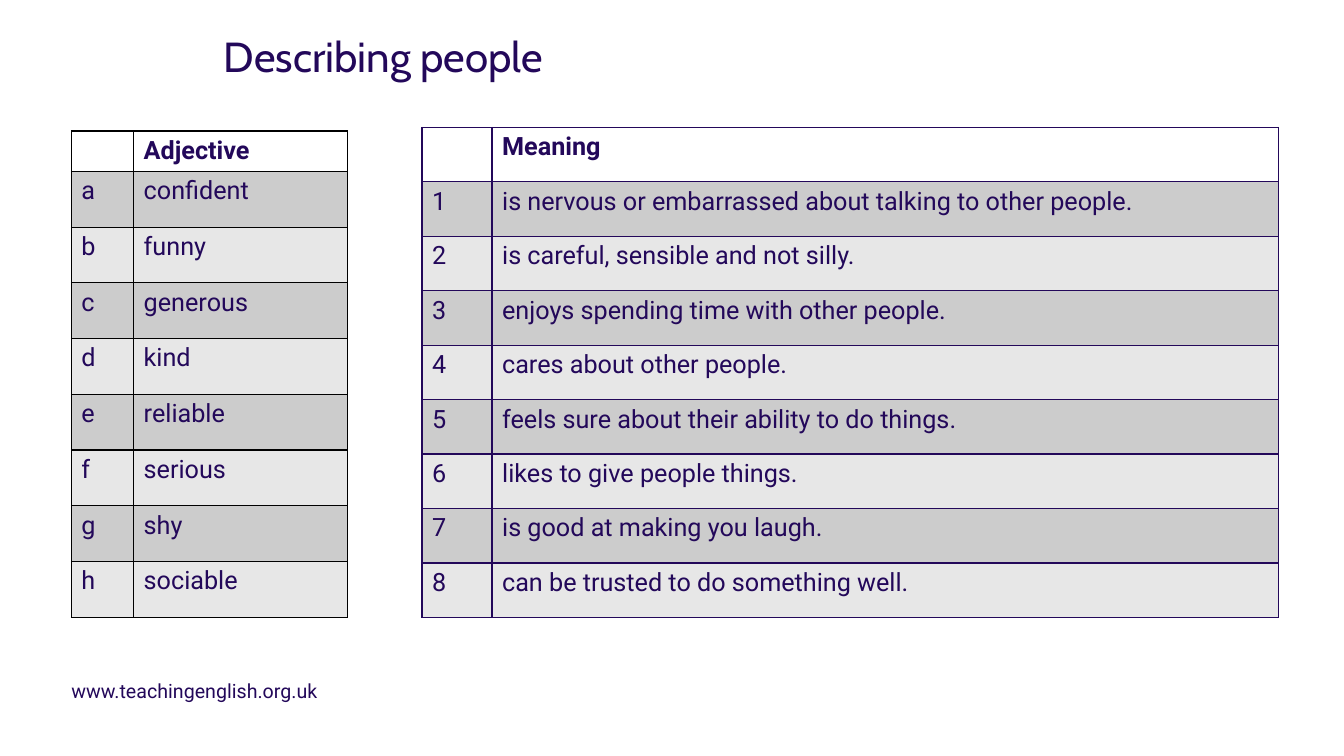
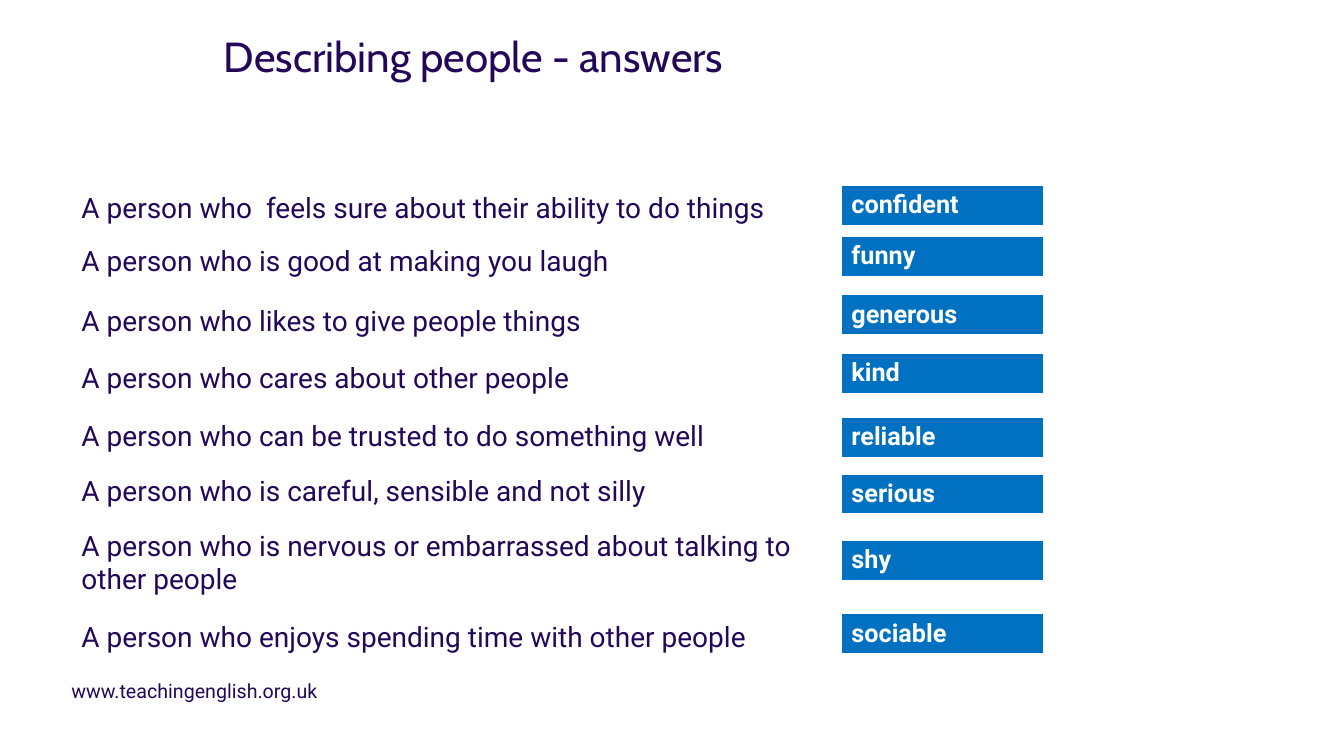
from dataclasses import dataclass

from lxml import etree
from pptx import Presentation
from pptx.dml.color import RGBColor
from pptx.enum.text import MSO_ANCHOR
from pptx.oxml.ns import qn
from pptx.util import Pt

TOP, BOTTOM = MSO_ANCHOR.TOP, MSO_ANCHOR.BOTTOM


@dataclass(frozen=True)
class Theme:
    ink: str = "23085A"
    black: str = "000000"
    white: str = "FFFFFF"
    blue: str = "0070C0"
    bands: tuple = ("CCCCCC", "E7E7E7")
    title_font: str = "Cabin"
    body_font: str = "Roboto"
    title_size: int = 30
    sentence_size: int = 20
    table_size: int = 18
    footer_size: int = 14


THEME = Theme()
MARGIN = 51
LABEL_LEFT = 601
THIN_EDGES = {"lnL": 1, "lnR": 1, "lnT": 1, "lnB": 1}
CARD_EDGES = {**THIN_EDGES, "lnB": 3}

TITLE = {"name": THEME.title_font, "size": Pt(THEME.title_size), "color": THEME.ink}
FOOTER = {"name": THEME.body_font, "size": Pt(THEME.footer_size), "color": THEME.ink}
BODY = {"name": THEME.body_font, "size": Pt(THEME.table_size), "color": THEME.ink, "bold": False}
HEADER = {**BODY, "bold": True}
SENTENCE = {**BODY, "size": Pt(THEME.sentence_size)}
LABEL = {**HEADER, "color": THEME.white}

MEANINGS = [
    "is nervous or embarrassed about talking to other people.",
    "is careful, sensible and not silly.",
    "enjoys spending time with other people.",
    "cares about other people.",
    "feels sure about their ability to do things.",
    "likes to give people things.",
    "is good at making you laugh.",
    "can be trusted to do something well.",
]

ANSWERS = [
    ("A person who  feels sure about their ability to do things", 134, "confident", 132.5),
    ("A person who is good at making you laugh", 172, "funny", 169),
    ("A person who likes to give people things", 214.5, "generous", 210.5),
    ("A person who cares about other people", 255.5, "kind", 252.5),
    ("A person who can be trusted to do something well", 296.5, "reliable", 298),
    ("A person who is careful, sensible and not silly", 336, "serious", 338.5),
    ("A person who is nervous or embarrassed about talking to other people", 375, "shy", 386),
    ("A person who enjoys spending time with other people", 440, "sociable", 438.5),
]


def write(p, text, style):
    r = p.add_run()
    r.text = text
    for name, value in style.items():
        if name == "color":
            r.font.color.rgb = RGBColor.from_string(value)
        else:
            setattr(r.font, name, value)


def add_text(s, box, text, style, anchor=TOP, line_spacing=None):
    tf = s.shapes.add_textbox(*map(Pt, box)).text_frame
    settings = {"word_wrap": True, "vertical_anchor": anchor, "margin_left": 0,
                "margin_right": 0, "margin_top": 0, "margin_bottom": 0}
    for name, value in settings.items():
        setattr(tf, name, value)
    p = tf.paragraphs[0]
    p.line_spacing = line_spacing
    write(p, text, style)


def set_borders(cell, color, edges):
    tc_pr = cell._tc.get_or_add_tcPr()
    for edge, width in edges.items():
        ln = etree.SubElement(tc_pr, qn(f"a:{edge}"), w=str(Pt(width)))
        fill = etree.SubElement(ln, qn("a:solidFill"))
        etree.SubElement(fill, qn("a:srgbClr"), val=color)


def fill_cell(cell, text, style, fill, border, edges):
    set_borders(cell, border, edges)
    if fill:
        cell.fill.solid()
        cell.fill.fore_color.rgb = RGBColor.from_string(fill)
    else:
        cell.fill.background()
    if text:
        write(cell.text_frame.paragraphs[0], text, style)


def add_grid(s, left, top, widths, heights):
    table = s.shapes.add_table(len(heights), len(widths), Pt(left), Pt(top),
                               Pt(sum(widths)), Pt(sum(heights))).table
    table.first_row = table.horz_banding = False
    for column, width in zip(table.columns, widths):
        column.width = Pt(width)
    for row, height in zip(table.rows, heights):
        row.height = Pt(height)
    return table


def add_word_table(s, left, top, widths, heights, heading, keys, words, border):
    table = add_grid(s, left, top, widths, heights)
    for i, values in enumerate([("", heading), *zip(keys, words)]):
        style = BODY if i else HEADER
        fill = THEME.bands[(i - 1) % 2] if i else None
        for j, text in enumerate(values):
            fill_cell(table.cell(i, j), text, style, fill, border, THIN_EDGES)


def add_card(s, left, top, width, text, style, fill=None):
    table = add_grid(s, left, top, [width], [29.5])
    fill_cell(table.cell(0, 0), text, style, fill, THEME.white, CARD_EDGES)


def add_slide(prs, title):
    s = prs.slides.add_slide(prs.slide_layouts[6])
    add_text(s, (160, 24.5, 800, 50), title, TITLE, line_spacing=Pt(33))
    add_text(s, (MARGIN, 486, 822, 16), "www.teachingenglish.org.uk", FOOTER, BOTTOM)
    return s


def add_matching_slide(prs):
    s = add_slide(prs, "Describing people")
    adjectives = [adjective for _, _, adjective, _ in ANSWERS]
    add_word_table(s, MARGIN, 93.6, [44.5, 152.5], [28.4] + [39.8] * 8,
                   "Adjective", "abcdefgh", adjectives, THEME.black)
    add_word_table(s, 301.5, 91, [50, 561.5], [38.9] * 9,
                   "Meaning", "12345678", MEANINGS, THEME.ink)


def add_answers_slide(prs):
    s = add_slide(prs, "Describing people - answers")
    for sentence, sentence_top, adjective, label_top in ANSWERS:
        add_card(s, MARGIN, sentence_top, LABEL_LEFT - MARGIN, sentence, SENTENCE)
        add_card(s, LABEL_LEFT, label_top, 144.5, adjective, LABEL, THEME.blue)


def main():
    prs = Presentation()
    prs.slide_width, prs.slide_height = Pt(960), Pt(540)
    add_matching_slide(prs)
    add_answers_slide(prs)
    prs.save("out.pptx")


if __name__ == "__main__":
    main()
